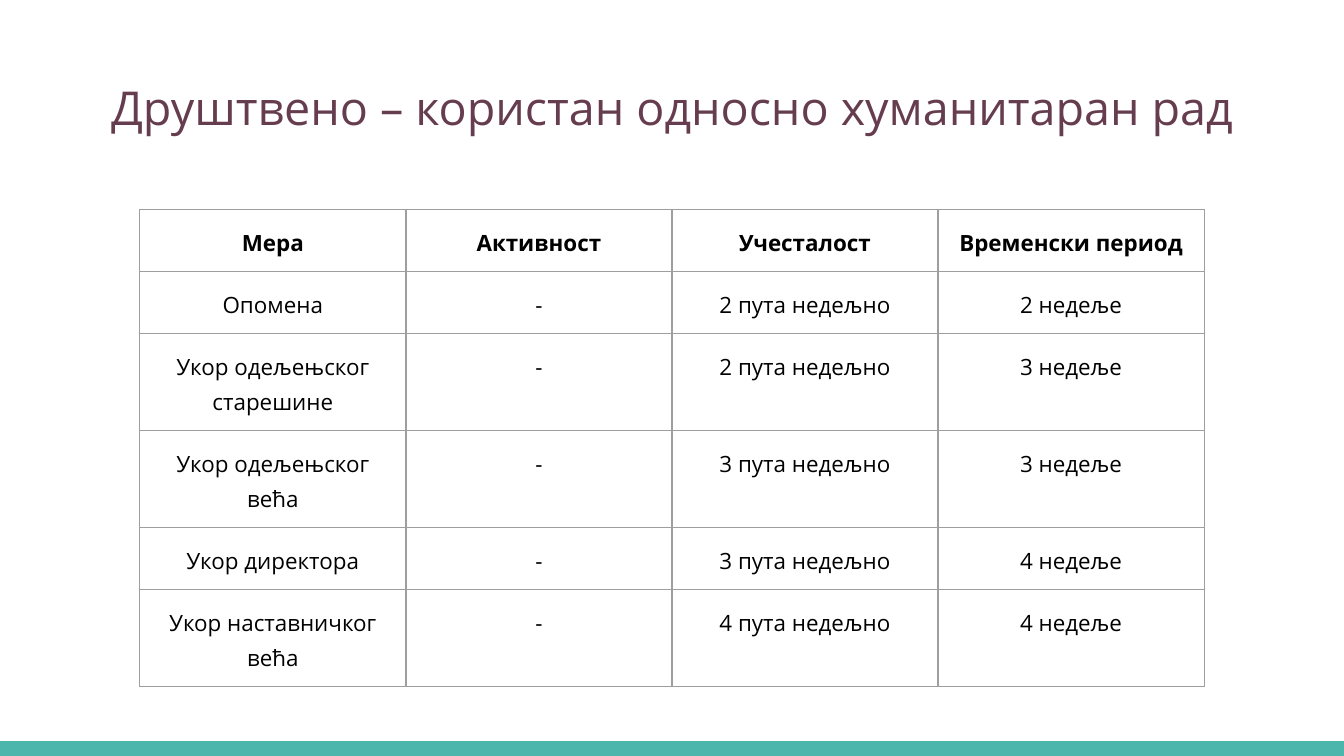
from lxml.etree import SubElement
from pptx import Presentation
from pptx.dml.color import RGBColor
from pptx.enum.shapes import MSO_SHAPE
from pptx.enum.text import MSO_ANCHOR, PP_ALIGN
from pptx.oxml.ns import qn
from pptx.util import Inches, Pt

# Content
TITLE = "Друштвено – користан односно хуманитаран рад"
ROWS = [
    ("Мера", "Активност", "Учесталост", "Временски период"),
    ("Опомена", "-", "2 пута недељно", "2 недеље"),
    ("Укор одељењског старешине", "-", "2 пута недељно", "3 недеље"),
    ("Укор одељењског већа", "-", "3 пута недељно", "3 недеље"),
    ("Укор директора", "-", "3 пута недељно", "4 недеље"),
    ("Укор наставничког већа", "-", "4 пута недељно", "4 недеље"),
]

# Format
COLORS = {"title": "663D4E", "text": "000000", "line": "9E9E9E", "bar": "4DB6AC"}
FONT = "Open Sans"
WIDE = 10
HIGH = WIDE * 9 / 16
BAR = 0.11
COL, ROW = 1.98, 0.42
PAD = Inches(0.1)
PADS = {f"margin_{side}": PAD for side in ("left", "top", "right", "bottom")}


def put(obj, values):
    for name, value in values.items():
        setattr(obj, name, value)


def write(frame, text, size, color, bold=False, space=1.0):
    para = frame.paragraphs[0]
    put(para, {"alignment": PP_ALIGN.CENTER, "line_spacing": space})
    run = para.add_run()
    run.text = text
    put(run.font, {"name": FONT, "size": Pt(size), "bold": bold})
    run.font.color.rgb = RGBColor.from_string(COLORS[color])


def border(cell):
    props = cell._tc.get_or_add_tcPr()
    for i, side in enumerate(("lnL", "lnR", "lnT", "lnB")):
        line = props.makeelement(qn(f"a:{side}"), {"w": str(Pt(0.75))})
        fill = SubElement(line, qn("a:solidFill"))
        SubElement(fill, qn("a:srgbClr"), val=COLORS["line"])
        props.insert(i, line)


deck = Presentation()
put(deck, {"slide_width": Inches(WIDE), "slide_height": Inches(HIGH)})
slide = deck.slides.add_slide(deck.slide_layouts[5])

# Bottom bar
bar = slide.shapes.add_shape(MSO_SHAPE.RECTANGLE, 0, Inches(HIGH - BAR),
                             Inches(WIDE), Inches(BAR))
bar.shadow.inherit = False
bar.fill.solid()
bar.fill.fore_color.rgb = RGBColor.from_string(COLORS["bar"])
bar.line.fill.background()

# Title
title = slide.shapes.title
put(title, {"left": Inches(0.34), "top": Inches(0.49),
            "width": Inches(WIDE - 2 * 0.34), "height": Inches(0.77)})
put(title.text_frame, {**PADS, "vertical_anchor": MSO_ANCHOR.TOP, "word_wrap": True})
write(title.text_frame, TITLE, 25, "title")

# Table, centred across the slide
cols = len(ROWS[0])
width = cols * COL
table = slide.shapes.add_table(
    len(ROWS), cols, Inches((WIDE - width) / 2), Inches(1.56),
    Inches(width), Inches(len(ROWS) * ROW)).table
put(table, {"first_row": False, "horz_banding": False})
for col in table.columns:
    col.width = Inches(COL)
for r, row in enumerate(ROWS):
    table.rows[r].height = Inches(ROW)
    for c, text in enumerate(row):
        cell = table.cell(r, c)
        put(cell, {**PADS, "vertical_anchor": MSO_ANCHOR.TOP})
        cell.fill.background()
        border(cell)
        write(cell.text_frame, text, 12, "text", bold=r == 0, space=1.15)

deck.save("out.pptx")
